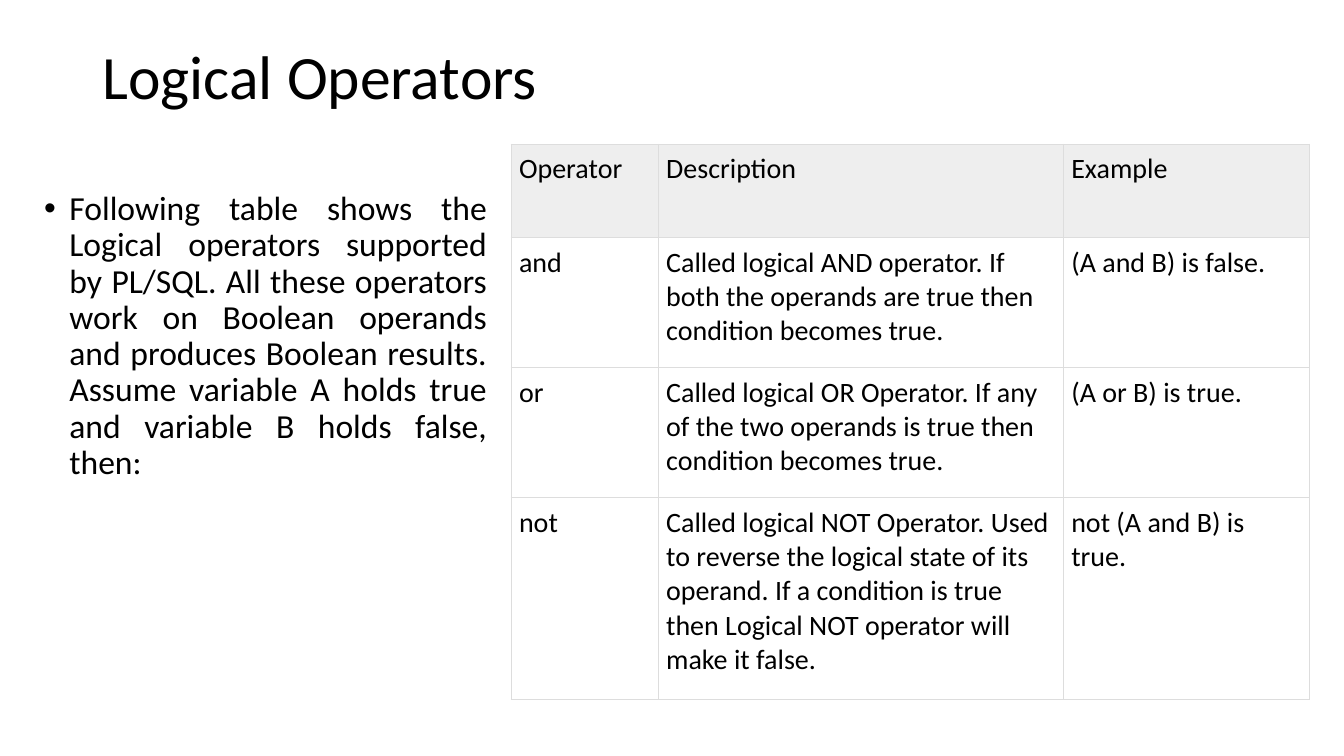
"""Build the Logical Operators slide with its explanatory text and operator table."""
from dataclasses import dataclass

from lxml.etree import SubElement
from pptx import Presentation
from pptx.dml.color import RGBColor
from pptx.enum.text import MSO_ANCHOR, PP_ALIGN
from pptx.oxml.ns import qn
from pptx.slide import Slide
from pptx.table import _Cell
from pptx.text.text import _Paragraph
from pptx.util import Pt

BLACK = RGBColor(0x00, 0x00, 0x00)
HEADER_GRAY = RGBColor(0xEE, 0xEE, 0xEE)
BORDER_GRAY = RGBColor(0xDD, 0xDD, 0xDD)
FONT_NAME = "Calibri"
TABLE_TEXT_SIZE = 20
BORDER_WIDTH = 0.75
CELL_MARGIN = 5.76
BULLET_INDENT = 18
COLUMN_WIDTHS = (105.1, 289.4, 175.7)


@dataclass(frozen=True)
class TextBlock:
    text: str
    left: float
    top: float
    width: float
    height: float
    size: float
    margin_top: float
    alignment: PP_ALIGN = PP_ALIGN.LEFT
    bulleted: bool = False


@dataclass(frozen=True)
class OperatorRow:
    operator: str
    description: str
    example: str
    height: float
    is_header: bool = False


TEXT_BLOCKS = (
    TextBlock("Logical Operators", 66.2, 28.8, 828, 104.4, 44, 4),
    TextBlock(
        "Following table shows the Logical operators supported by PL/SQL. "
        "All these operators work on Boolean operands and produces Boolean results. "
        "Assume variable A holds true and variable B holds false, then:",
        24.5, 133.2, 330.5, 150.5, 24, 3.6, PP_ALIGN.JUSTIFY, True,
    ),
)

OPERATOR_ROWS = (
    OperatorRow("Operator", "Description", "Example", 66.7, True),
    OperatorRow(
        "and",
        "Called logical AND operator. If both the operands are true then condition becomes true.",
        "(A and B) is false.", 92.8,
    ),
    OperatorRow(
        "or",
        "Called logical OR Operator. If any of the two operands is true then condition becomes true.",
        "(A or B) is true.", 92.8,
    ),
    OperatorRow(
        "not",
        "Called logical NOT Operator. Used to reverse the logical state of its operand. "
        "If a condition is true then Logical NOT operator will make it false.",
        "not (A and B) is true.", 144.5,
    ),
)


def add_run(paragraph: _Paragraph, text: str, size: float) -> None:
    run = paragraph.add_run()
    run.text = text
    run.font.name = FONT_NAME
    run.font.size = Pt(size)
    run.font.bold = False
    run.font.color.rgb = BLACK


def add_bullet(paragraph: _Paragraph) -> None:
    properties = paragraph._p.get_or_add_pPr()
    properties.set("marL", str(Pt(BULLET_INDENT)))
    properties.set("indent", str(-Pt(BULLET_INDENT)))
    SubElement(properties, qn("a:buFont"), typeface="Arial")
    SubElement(properties, qn("a:buChar"), char="•")


def add_text_block(slide: Slide, block: TextBlock) -> None:
    shape = slide.shapes.add_textbox(
        Pt(block.left), Pt(block.top), Pt(block.width), Pt(block.height)
    )
    frame = shape.text_frame
    frame.word_wrap = True
    frame.vertical_anchor = MSO_ANCHOR.TOP
    frame.margin_top = Pt(block.margin_top)
    paragraph = frame.paragraphs[0]
    paragraph.alignment = block.alignment
    paragraph.line_spacing = 0.9
    if block.bulleted:
        add_bullet(paragraph)
    add_run(paragraph, block.text, block.size)


def add_borders(cell: _Cell) -> None:
    properties = cell._tc.get_or_add_tcPr()
    for side in ("lnL", "lnR", "lnT", "lnB"):
        line = SubElement(properties, qn(f"a:{side}"), w=str(Pt(BORDER_WIDTH)))
        fill = SubElement(line, qn("a:solidFill"))
        SubElement(fill, qn("a:srgbClr"), val=str(BORDER_GRAY))


def fill_cell(cell: _Cell, text: str, is_header: bool) -> None:
    cell.margin_left = cell.margin_right = Pt(CELL_MARGIN)
    cell.margin_top = cell.margin_bottom = Pt(CELL_MARGIN)
    cell.vertical_anchor = MSO_ANCHOR.TOP
    add_borders(cell)
    if is_header:
        cell.fill.solid()
        cell.fill.fore_color.rgb = HEADER_GRAY
    else:
        cell.fill.background()
    add_run(cell.text_frame.paragraphs[0], text, TABLE_TEXT_SIZE)


def add_operator_table(slide: Slide, left: float, top: float) -> None:
    height = sum(row.height for row in OPERATOR_ROWS)
    shape = slide.shapes.add_table(
        len(OPERATOR_ROWS), len(COLUMN_WIDTHS),
        Pt(left), Pt(top), Pt(sum(COLUMN_WIDTHS)), Pt(height),
    )
    table = shape.table
    table.first_row = False
    table.horz_banding = False
    for column, width in zip(table.columns, COLUMN_WIDTHS):
        column.width = Pt(width)
    for table_row, row in zip(table.rows, OPERATOR_ROWS):
        table_row.height = Pt(row.height)
        texts = (row.operator, row.description, row.example)
        for cell, text in zip(table_row.cells, texts):
            fill_cell(cell, text, row.is_header)


def main() -> None:
    presentation = Presentation()
    presentation.slide_width = Pt(960)
    presentation.slide_height = Pt(540)
    slide = presentation.slides.add_slide(presentation.slide_layouts[6])
    for block in TEXT_BLOCKS:
        add_text_block(slide, block)
    add_operator_table(slide, 365, 103)
    presentation.save("out.pptx")


if __name__ == "__main__":
    main()
